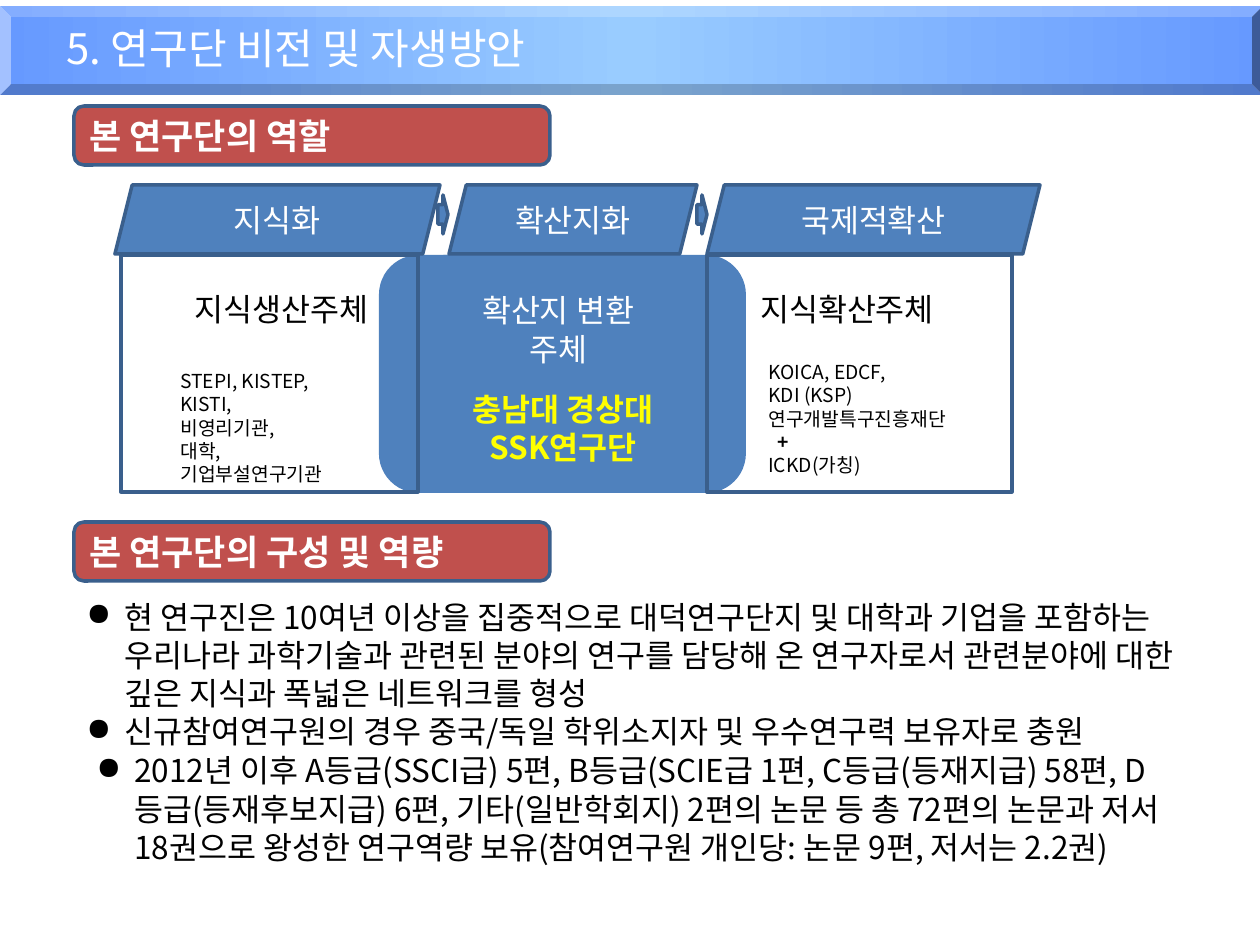
import copy

import pptx
import pptx.dml.color
import pptx.enum.shapes
import pptx.enum.text
import pptx.oxml
import pptx.oxml.ns
import pptx.util
from lxml import etree

FONT = "Noto Sans CJK KR"
COLORS = {
    "blue": "4F81BD", "outline": "3A5F8C", "red": "C0504D", "white": "FFFFFF",
    "black": "000000", "yellow": "FFFF00", "edge": "6699FF", "glow": "99CCFF",
}
SHAPE = pptx.enum.shapes.MSO_SHAPE
ALIGN = pptx.enum.text.PP_ALIGN
ANCHOR = pptx.enum.text.MSO_ANCHOR
qn = pptx.oxml.ns.qn


def px(n):
    return pptx.util.Emu(round(n * 914400 / 126))


def rgb(name):
    return pptx.dml.color.RGBColor.from_string(COLORS[name])


class Deck:
    """Holds the style and the current slide, and draws each kind of element."""

    def __init__(self, width, height):
        self.prs = pptx.Presentation()
        self.prs.slide_width, self.prs.slide_height = px(width), px(height)
        self.slide = self.prs.slides.add_slide(self.prs.slide_layouts[6])

    def fill_text(self, sp, lines, size=18, color="black", bold=False, align=ALIGN.LEFT):
        tf = sp.text_frame
        tf.word_wrap = True
        for i, line in enumerate(lines):
            p = tf.paragraphs[0] if i == 0 else tf.add_paragraph()
            p.text = line
            p.alignment = align
            p.line_spacing = pptx.util.Pt(round(size * 1.21, 1))
            p.font.size, p.font.bold = pptx.util.Pt(size), bold
            p.font.color.rgb = rgb(color)
            p.font.name = FONT
            defaults = p._p.pPr.find(qn("a:defRPr"))
            etree.SubElement(defaults, qn("a:ea"), typeface=FONT)
        return tf.paragraphs

    def shape(self, kind, box, fill=None, line=True):
        sp = self.slide.shapes.add_shape(kind, *map(px, box))
        sp.shadow.inherit = False
        if fill:
            sp.fill.solid()
            sp.fill.fore_color.rgb = rgb(fill)
        else:
            sp.fill.background()
        if line:
            sp.line.color.rgb = rgb("outline")
            sp.line.width = pptx.util.Pt(2)
        else:
            sp.line.fill.background()
        return sp

    def label(self, kind, box, fill, text, **style):
        sp = self.shape(kind, box, fill)
        sp.text_frame.vertical_anchor = ANCHOR.MIDDLE
        self.fill_text(sp, [text], color="white", **style)

    def text(self, box, lines, **style):
        return self.fill_text(self.slide.shapes.add_textbox(*map(px, box)), lines, **style)

    def bullets(self, box, lines):
        for p in self.text(box, lines):
            pPr = p._p.pPr
            pPr.set("marL", str(px(38)))
            pPr.set("indent", str(-px(38)))
            mark = etree.Element(qn("a:buChar"), char="●")
            pPr.find(qn("a:defRPr")).addprevious(mark)

    def banner(self, box, text_box, title):
        sp = self.shape(SHAPE.BEVEL, box, "edge", line=False)
        sp.adjustments[0] = 0.125
        sp.fill.gradient()
        sp.fill.gradient_angle = 0
        stops = sp._element.spPr.find(".//" + qn("a:gsLst"))
        stops.append(copy.deepcopy(stops[0]))
        for stop, at, color in zip(sp.fill.gradient_stops, (0, 0.5, 1), ("edge", "glow", "edge")):
            stop.position = at
            stop.color.rgb = rgb(color)
        p = self.text(text_box, [title], size=24, color="white")[0]
        shadow = pptx.oxml.parse_xml(
            f'<a:effectLst {pptx.oxml.ns.nsdecls("a")}><a:outerShdw dist="35921" dir="2700000">'
            '<a:srgbClr val="C0C0C0"/></a:outerShdw></a:effectLst>')
        p._p.pPr.find(qn("a:defRPr")).find(qn("a:solidFill")).addnext(shadow)


def main():
    deck = Deck(1260, 945)
    center = ALIGN.CENTER

    for box in ((418, 255, 287, 163), (379, 255, 367, 238)):
        deck.shape(SHAPE.ROUNDED_RECTANGLE, box, "blue", line=False)
    deck.text((173, 284, 217, 50), ["지식생산주체"], align=center)
    deck.text((736, 284, 222, 50), ["지식확산주체"], align=center)
    deck.text((459, 285, 198, 89), ["확산지 변환 주체"], color="white", align=center)

    for left, width, stage in ((115, 325, "지식화"), (707, 333, "국제적확산"), (449, 248, "확산지화")):
        deck.label(SHAPE.PARALLELOGRAM, (left, 185, width, 69), "blue", stage, align=center)
    for left, width in ((121, 297), (707, 305)):
        deck.shape(SHAPE.RECTANGLE, (left, 255, width, 237))
    for left in (438, 697):
        deck.shape(SHAPE.RIGHT_ARROW, (left, 195, 10, 39), "blue")

    deck.text((168, 363, 202, 106),
              ["STEPI, KISTEP, KISTI,", "비영리기관,", "대학,", "기업부설연구기관"], size=11)
    partners = deck.text((756, 354, 238, 130),
                         ["KOICA, EDCF,", "KDI (KSP)", "연구개발특구진흥재단", "+", "ICKD(가칭)"], size=11)
    partners[3].font.bold = True
    partners[3]._p.pPr.set("marL", str(px(9)))

    deck.banner((0, 6, 1263, 89), (54, 16, 1081, 63), "5. 연구단 비전 및 자생방안")
    for top, heading in ((106, "본 연구단의 역할"), (522, "본 연구단의 구성 및 역량")):
        deck.label(SHAPE.ROUNDED_RECTANGLE, (74, top, 476, 59), "red", heading, size=20, bold=True)

    deck.bullets((74, 591, 1131, 165), [
        "현 연구진은 10여년 이상을 집중적으로 대덕연구단지 및 대학과 기업을 포함하는 "
        "우리나라 과학기술과 관련된 분야의 연구를 담당해 온 연구자로서 관련분야에 대한 "
        "깊은 지식과 폭넓은 네트워크를 형성",
        "신규참여연구원의 경우 중국/독일 학위소지자 및 우수연구력 보유자로 충원",
    ])
    deck.bullets((84, 745, 1111, 165), [
        "2012년 이후 A등급(SSCI급) 5편, B등급(SCIE급 1편, C등급(등재지급) 58편, "
        "D등급(등재후보지급) 6편, 기타(일반학회지) 2편의 논문 등 총 72편의 논문과 "
        "저서 18권으로 왕성한 연구역량 보유(참여연구원 개인당: 논문 9편, 저서는 2.2권)",
    ])
    deck.text((449, 383, 228, 89), ["충남대 경상대", "SSK연구단"],
              color="yellow", bold=True, align=center)
    deck.prs.save("out.pptx")


if __name__ == "__main__":
    main()
